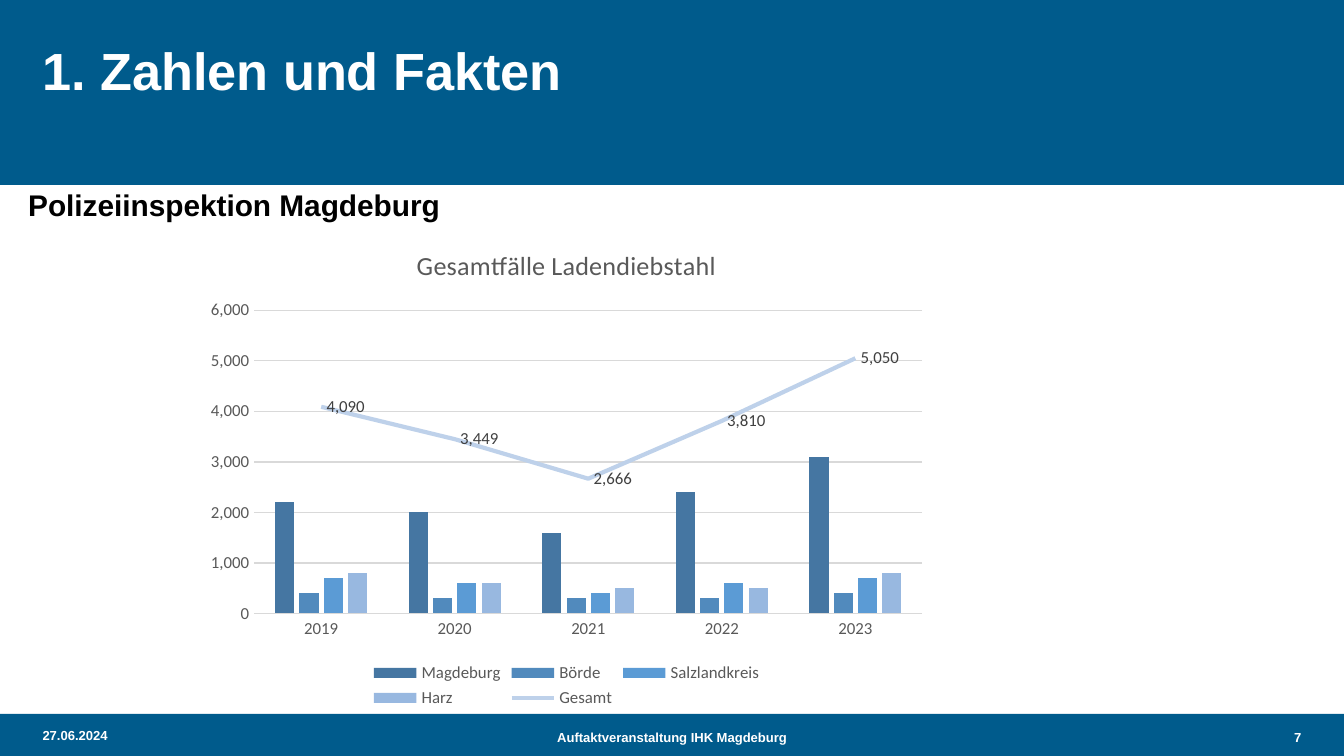
"""Builds the slide on shoplifting cases in the Magdeburg police district."""
from pptx import Presentation
from pptx.chart.data import CategoryChartData
from pptx.dml.color import RGBColor
from pptx.enum.chart import XL_CHART_TYPE, XL_LABEL_POSITION, XL_LEGEND_POSITION, XL_MARKER_STYLE, XL_TICK_MARK
from pptx.enum.shapes import MSO_SHAPE
from pptx.enum.text import MSO_ANCHOR, PP_ALIGN
from pptx.oxml import parse_xml
from pptx.oxml.ns import nsdecls, qn
from pptx.util import Pt

COLUMNS = XL_CHART_TYPE.COLUMN_CLUSTERED
RECTANGLE = MSO_SHAPE.RECTANGLE
TOP, MIDDLE, BOTTOM = MSO_ANCHOR.TOP, MSO_ANCHOR.MIDDLE, MSO_ANCHOR.BOTTOM
LEFT, CENTER, RIGHT = PP_ALIGN.LEFT, PP_ALIGN.CENTER, PP_ALIGN.RIGHT
NO_TICKS, NO_MARKER = XL_TICK_MARK.NONE, XL_MARKER_STYLE.NONE
LEGEND_BOTTOM, LABEL_RIGHT = XL_LEGEND_POSITION.BOTTOM, XL_LABEL_POSITION.RIGHT
BLUE, WHITE, BLACK = "005B8C", "FFFFFF", "000000"
GREY, LABEL_GREY, GRID_GREY = "595959", "404040", "D9D9D9"


def color(hex_value):
    return RGBColor.from_string(hex_value)


def add_text(text, left, top, width, height, size=7, fill=WHITE, align=LEFT, anchor=MIDDLE):
    frame = slide.shapes.add_textbox(Pt(left), Pt(top), Pt(width), Pt(height)).text_frame
    frame.word_wrap = True
    frame.vertical_anchor = anchor
    frame.margin_left = frame.margin_right = frame.margin_top = frame.margin_bottom = Pt(2.8)
    paragraph = frame.paragraphs[0]
    paragraph.text = text
    paragraph.alignment = align
    font = paragraph.runs[0].font
    font.name, font.size, font.bold = "Arial", Pt(size), True
    font.color.rgb = color(fill)


presentation = Presentation()
presentation.slide_width, presentation.slide_height = Pt(720), Pt(405)
slide = presentation.slides.add_slide(presentation.slide_layouts[6])

for band_top, band_height in ((382.5, 22.5), (0, 99)):
    band = slide.shapes.add_shape(RECTANGLE, 0, Pt(band_top), Pt(720), Pt(band_height))
    band.shadow.inherit = False
    band.fill.solid()
    band.fill.fore_color.rgb = color(BLUE)
    band.line.fill.background()

add_text("Auftaktveranstaltung IHK Magdeburg", 145, 384, 430, 21.5, align=CENTER)
add_text("7", 587, 384, 113, 21.5, align=RIGHT)
add_text("1. Zahlen und Fakten", 20, 17.5, 567, 70.5, size=28, anchor=TOP)
add_text("27.06.2024", 20, 382.5, 113, 22.5)
add_text("Polizeiinspektion Magdeburg", 12.3, 80, 506, 41.8, size=16, fill=BLACK, anchor=BOTTOM)

districts = {
    "Magdeburg": ((2200, 2000, 1600, 2400, 3100), "4576A2"),
    "Börde": ((400, 300, 300, 300, 400), "518ABD"),
    "Salzlandkreis": ((700, 600, 400, 600, 700), "5B9BD5"),
    "Harz": ((800, 600, 500, 500, 800), "98B8E0"),
    "Gesamt": ((4090, 3449, 2666, 3810, 5050), "BED1EA"),
}
cases = CategoryChartData(number_format="#,##0")
cases.categories = ["2019", "2020", "2021", "2022", "2023"]
for district, (counts, _) in districts.items():
    cases.add_series(district, counts)
chart = slide.shapes.add_chart(COLUMNS, Pt(105), Pt(121), Pt(397), Pt(261), cases).chart
chart.font.name, chart.font.size = "Calibri", Pt(10)
chart.font.color.rgb = color(BLACK)

chart.has_title = True
chart.chart_title.include_in_layout = False
heading = chart.chart_title.text_frame
heading.text = "Gesamtfälle Ladendiebstahl"
heading_font = heading.paragraphs[0].runs[0].font
heading_font.bold = False

chart.has_legend = True
chart.legend.position = LEGEND_BOTTOM
chart.legend.include_in_layout = False

years, amounts = chart.category_axis, chart.value_axis
for axis in (years, amounts):
    axis.major_tick_mark = axis.minor_tick_mark = NO_TICKS
amounts.minimum_scale, amounts.maximum_scale, amounts.major_unit = 0, 6000, 1000
amounts.tick_labels.number_format = "#,##0"
amounts.tick_labels.number_format_is_linked = False
amounts.format.line.fill.background()
for rule in (years.format.line, amounts.major_gridlines.format.line):
    rule.color.rgb = color(GRID_GREY)
    rule.width = Pt(0.75)

bars = chart.plots[0]
bars.gap_width, bars.overlap, bars.vary_by_categories = 219, -27, False

bar_group = chart.element.find(".//" + qn("c:barChart"))
total_series = bar_group.findall(qn("c:ser"))[-1]
for bar_setting in total_series.findall(qn("c:invertIfNegative")):
    total_series.remove(bar_setting)
line_group = parse_xml(
    f'<c:lineChart {nsdecls("c")}><c:grouping val="standard"/><c:varyColors val="0"/>'
    '<c:marker val="1"/></c:lineChart>')
line_group.insert(2, total_series)
for axis_id in bar_group.findall(qn("c:axId")):
    line_group.append(parse_xml(f'<c:axId {nsdecls("c")} val="{axis_id.get("val")}"/>'))
bar_group.addnext(line_group)

for series in bars.series:
    series.invert_if_negative = False
    series.format.fill.solid()
    series.format.fill.fore_color.rgb = color(districts[series.name][1])

total = chart.plots[1].series[0]
total.smooth = False
total.marker.style = NO_MARKER
total.format.line.color.rgb = color(districts["Gesamt"][1])
total.format.line.width = Pt(2.25)
labels = total.data_labels
labels.show_value = True
labels.position = LABEL_RIGHT
labels.number_format, labels.number_format_is_linked = "#,##0", False

for font, size, shade in (
    (heading_font, 14, GREY),
    (chart.legend.font, 9, GREY),
    (years.tick_labels.font, 9, GREY),
    (amounts.tick_labels.font, 9, GREY),
    (labels.font, 9, LABEL_GREY),
):
    font.name, font.size = "Calibri", Pt(size)
    font.color.rgb = color(shade)

presentation.save("out.pptx")
